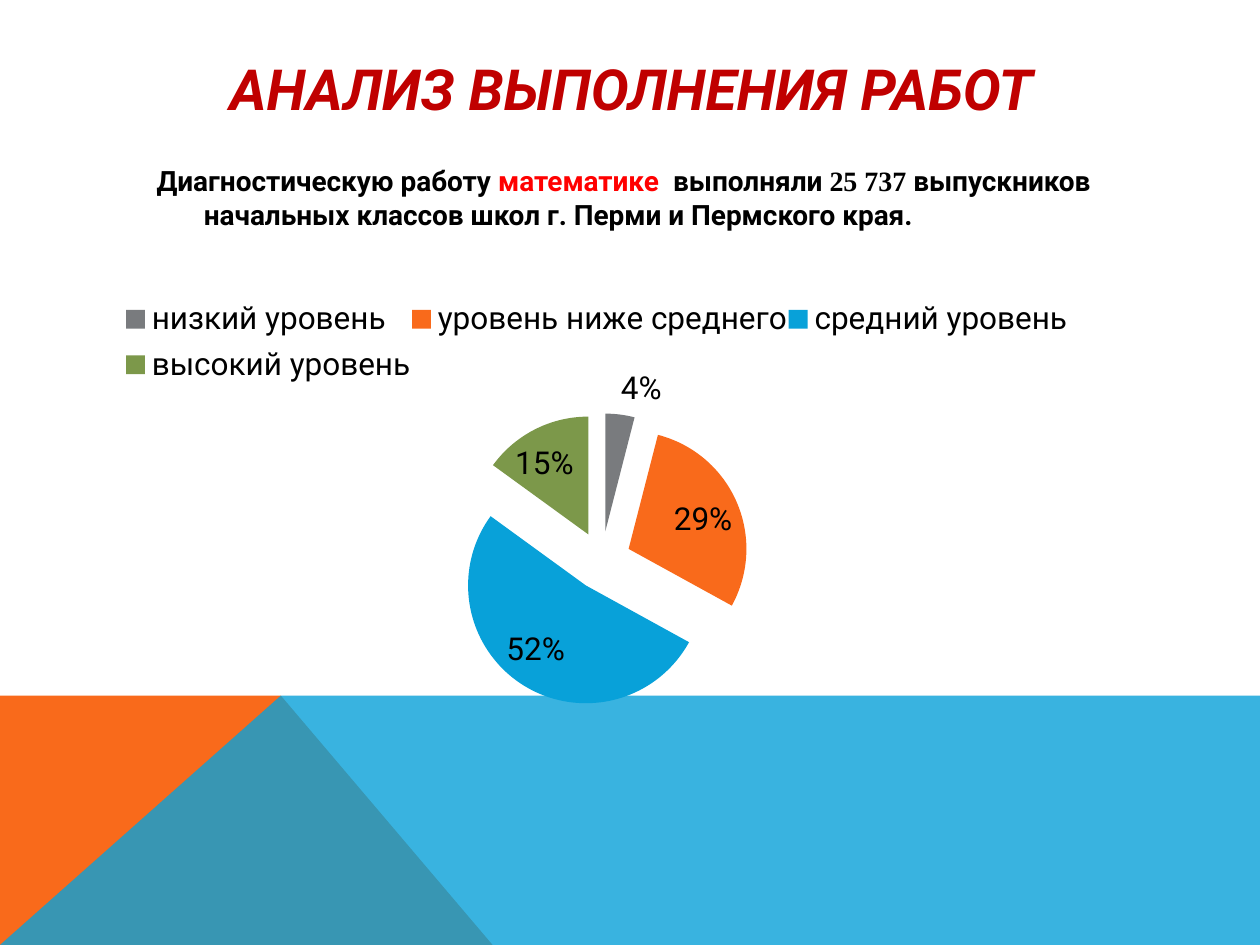
from lxml import etree
from pptx import Presentation
from pptx.chart.data import CategoryChartData
from pptx.dml.color import RGBColor
from pptx.enum import chart as ch, text
from pptx.oxml import parse_xml
from pptx.oxml.ns import nsdecls, qn
from pptx.util import Pt

COLORS = {
    "title": "C00000", "text": "000000", "accent": "FF0000",
    "gray": "797B7E", "orange": "F96A1B", "blue": "08A1D9", "green": "7C984A",
}
FONT = "Roboto"
WIDTH, HEIGHT = 720, 540
BAND_TOP, PEAK = 397.5, 160.5


class SlideBuilder:
    def __init__(self, prs):
        self.slide = prs.slides.add_slide(prs.slide_layouts[5])

    def style(self, font, size, color, bold=False, italic=False, name=FONT):
        font.name, font.size = name, Pt(size)
        font.bold, font.italic = bold, italic
        font.color.rgb = RGBColor.from_string(COLORS[color])

    def place(self, sp, left, top, width, height):
        sp.left, sp.top, sp.width, sp.height = map(Pt, (left, top, width, height))

    def title(self, words, *box):
        sp = self.slide.shapes.title
        self.place(sp, *box)
        tf = sp.text_frame
        tf.text = words
        tf.auto_size = text.MSO_AUTO_SIZE.NONE
        tf.vertical_anchor = text.MSO_ANCHOR.MIDDLE
        p = tf.paragraphs[0]
        p.alignment = text.PP_ALIGN.CENTER
        self.style(p.runs[0].font, 32.4, "title", bold=True, italic=True)

    def polygon(self, points, color, alpha=None):
        """Draw a filled outline; alpha is opacity in percent."""
        start, *rest = [(Pt(x), Pt(y)) for x, y in points]
        builder = self.slide.shapes.build_freeform(*start)
        builder.add_line_segments(rest, close=True)
        sp = builder.convert_to_shape()
        sp.shadow.inherit = False
        sp.line.fill.background()
        sp.fill.solid()
        sp.fill.fore_color.rgb = RGBColor.from_string(COLORS[color])
        if alpha:
            clr = sp.fill._xPr.find(f".//{qn('a:srgbClr')}")
            etree.SubElement(clr, qn("a:alpha"), val=str(alpha * 1000))

    def paragraph(self, runs, *box):
        """Add a hanging-indent paragraph of (words, color, font) runs."""
        sp = self.slide.shapes.add_textbox(*map(Pt, box))
        tf = sp.text_frame
        tf.word_wrap = True
        p = tf.paragraphs[0]
        p.space_before = Pt(8)
        pPr = p._p.get_or_add_pPr()
        pPr.set("marL", str(Pt(27)))
        pPr.set("indent", str(Pt(-27)))
        for words, color, name in runs:
            r = p.add_run()
            r.text = words
            self.style(r.font, 16, color, bold=True, name=name)

    def manual_layout(self, x, y, w, h, inner=False):
        target = '<c:layoutTarget val="inner"/>' if inner else ""
        return parse_xml(
            f'<c:layout {nsdecls("c")}><c:manualLayout>{target}'
            '<c:xMode val="edge"/><c:yMode val="edge"/>'
            f'<c:x val="{x}"/><c:y val="{y}"/><c:w val="{w}"/><c:h val="{h}"/>'
            '</c:manualLayout></c:layout>')

    def pie(self, slices, *box):
        """Add an exploded pie of (category, value, color) slices."""
        data = CategoryChartData()
        data.categories = [s[0] for s in slices]
        data.add_series("Series 1", [s[1] for s in slices])
        chart = self.slide.shapes.add_chart(
            ch.XL_CHART_TYPE.PIE, *map(Pt, box), data).chart
        chart.has_title = False
        self.style(chart.font, 18, "text")
        plot = chart.plots[0]
        plot.vary_by_categories = True
        series = plot.series[0]
        for i, (_, _, color) in enumerate(slices):
            fill = series.points[i].format.fill
            fill.solid()
            fill.fore_color.rgb = RGBColor.from_string(COLORS[color])
        series._element.find(qn("c:dPt")).addprevious(
            parse_xml(f'<c:explosion {nsdecls("c")} val="25"/>'))

        plot.has_data_labels = True
        labels = plot.data_labels
        labels.show_percentage, labels.show_value = True, False
        labels.number_format, labels.number_format_is_linked = "0%", False
        labels.position = ch.XL_LABEL_POSITION.BEST_FIT

        chart.has_legend = True
        legend = chart.legend
        legend.position = ch.XL_LEGEND_POSITION.TOP
        legend.include_in_layout = False
        for old in legend._element.findall(qn("c:layout")):
            legend._element.remove(old)
        legend._element.find(qn("c:legendPos")).addnext(
            self.manual_layout(0.02, 0, 0.97, 0.23))
        area = chart._chartSpace.find(f".//{qn('c:plotArea')}")
        for old in area.findall(qn("c:layout")):
            area.remove(old)
        area.insert(0, self.manual_layout(0.35, 0.28, 0.32, 0.68, inner=True))


def main():
    prs = Presentation()
    prs.slide_width, prs.slide_height = Pt(WIDTH), Pt(HEIGHT)
    s = SlideBuilder(prs)
    s.polygon([(0, HEIGHT), (0, BAND_TOP), (PEAK, BAND_TOP), (281.5, HEIGHT)],
              "orange")
    s.polygon([(0, HEIGHT), (PEAK, BAND_TOP), (WIDTH, BAND_TOP), (WIDTH, HEIGHT)],
              "blue", alpha=80)
    s.title("АНАЛИЗ ВЫПОЛНЕНИЯ РАБОТ", 64.5, 28.5, 592.5, 43)
    s.paragraph([
        ("Диагностическую работу ", "text", FONT),
        ("математике  ", "accent", FONT),
        ("выполняли ", "text", FONT),
        ("25 737 ", "text", "Times New Roman"),
        ("выпускников начальных классов школ г. Перми и Пермского края.",
         "text", FONT),
    ], 82.4, 90, 607, 402)
    s.pie([
        ("низкий уровень", 4, "gray"),
        ("уровень ниже среднего", 29, "orange"),
        ("средний уровень", 52, "blue"),
        ("высокий уровень", 15, "green"),
    ], 60, 167, 556.5, 247.5)
    prs.save("out.pptx")


if __name__ == "__main__":
    main()
